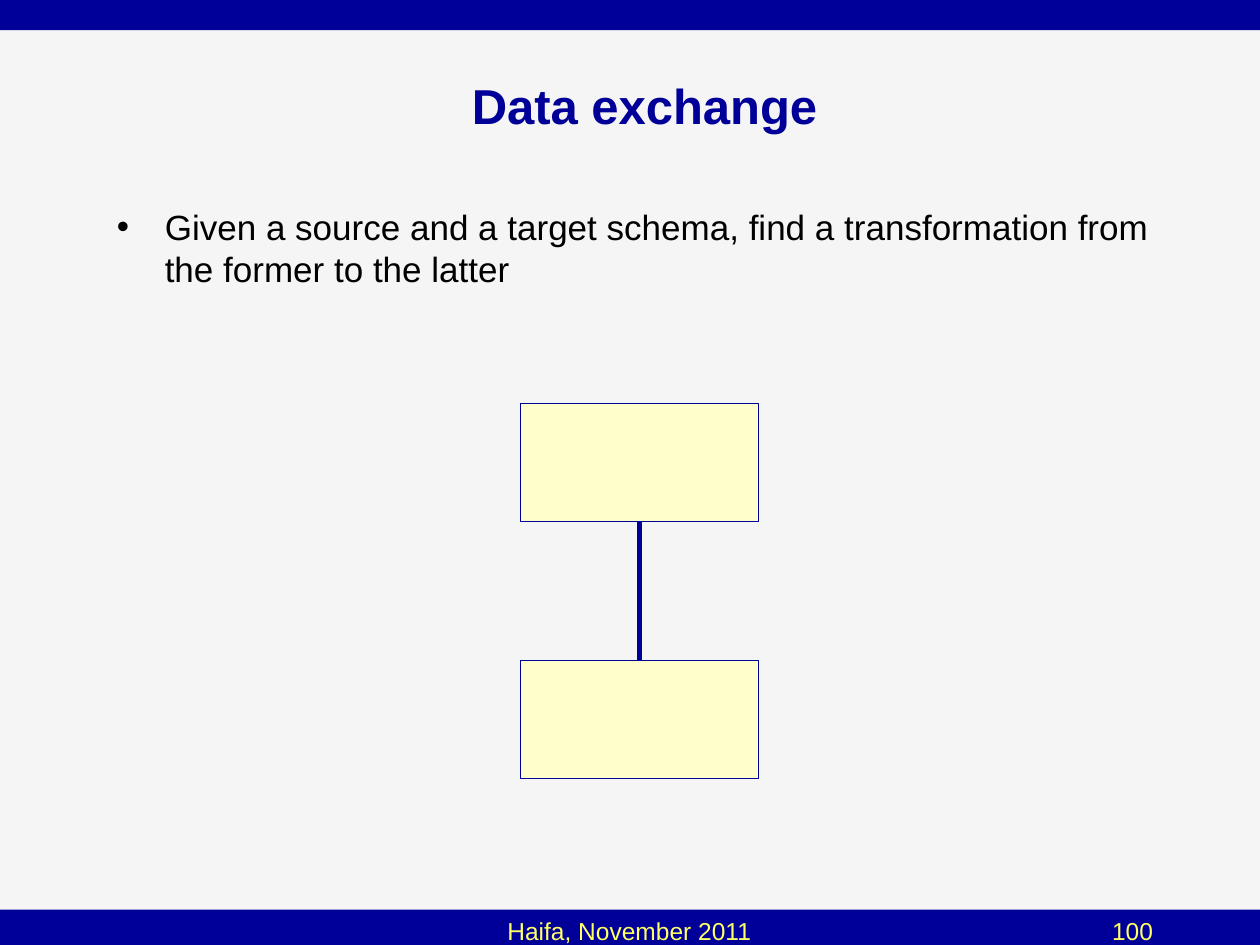
"""Build the data exchange slide with two schemas joined by a line."""
from lxml.etree import SubElement
from pptx import Presentation
from pptx.dml.color import RGBColor
from pptx.enum.shapes import MSO_CONNECTOR, MSO_SHAPE
from pptx.enum.text import MSO_ANCHOR, PP_ALIGN
from pptx.oxml.ns import qn
from pptx.util import Inches, Pt

COLORS = {
    "background": "F5F5F5",
    "navy": "000099",
    "footer": "FFFF66",
    "schema": "FFFFCC",
    "text": "000000",
}


def add_text(text, left, top, width, height, size, color, bold=False,
             align=PP_ALIGN.LEFT, anchor=MSO_ANCHOR.TOP, bullet=None):
    box = slide.shapes.add_textbox(Inches(left), Inches(top), Inches(width), Inches(height))
    frame = box.text_frame
    frame.word_wrap = True
    frame.vertical_anchor = anchor
    paragraph = frame.paragraphs[0]
    paragraph.alignment = align
    if bullet:
        properties = paragraph._p.get_or_add_pPr()
        properties.set("marL", str(Inches(0.38)))
        properties.set("indent", str(Inches(-0.38)))
        SubElement(properties, qn("a:buFont"), typeface="Arial")
        SubElement(properties, qn("a:buChar"), char=bullet)
    run = paragraph.add_run()
    run.text = text
    run.font.name = "Arial"
    run.font.size = Pt(size)
    run.font.bold = bold
    run.font.color.rgb = RGBColor.from_string(COLORS[color])


presentation = Presentation()
presentation.slide_width = Inches(10)
presentation.slide_height = Inches(7.5)
slide = presentation.slides.add_slide(presentation.slide_layouts[6])
slide.background.fill.solid()
slide.background.fill.fore_color.rgb = RGBColor.from_string(COLORS["background"])

schema_left, schema_width, schema_height = 4.13, 1.89, 0.94
source_top, target_top = 3.2, 5.24
rectangles = [
    (0, 0, 10, 0.24, "navy"),
    (0, 7.22, 10, 0.28, "navy"),
    (schema_left, source_top, schema_width, schema_height, "schema"),
    (schema_left, target_top, schema_width, schema_height, "schema"),
]
for left, top, width, height, fill in rectangles:
    shape = slide.shapes.add_shape(
        MSO_SHAPE.RECTANGLE, Inches(left), Inches(top), Inches(width), Inches(height))
    shape.shadow.inherit = False
    shape.fill.solid()
    shape.fill.fore_color.rgb = RGBColor.from_string(COLORS[fill])
    if fill == "schema":
        shape.line.color.rgb = RGBColor.from_string(COLORS["navy"])
        shape.line.width = Pt(0.75)
    else:
        shape.line.fill.background()

center = Inches(schema_left + schema_width / 2)
connector = slide.shapes.add_connector(
    MSO_CONNECTOR.STRAIGHT, center, Inches(source_top + schema_height),
    center, Inches(target_top))
connector.line.color.rgb = RGBColor.from_string(COLORS["navy"])
connector.line.width = Pt(3)
SubElement(connector._element.spPr, qn("a:effectLst"))

add_text("Data exchange", 0.43, 0.25, 9.37, 1.17, 28, "navy", bold=True,
         align=PP_ALIGN.CENTER, anchor=MSO_ANCHOR.MIDDLE)
add_text("Given a source and a target schema, find a transformation from the former to the latter",
         0.83, 1.58, 8.5, 4.92, 20, "text", bullet="•")
add_text("Haifa, November 2011", 2.16, 7.22, 5.67, 0.5, 14, "footer", align=PP_ALIGN.CENTER)
add_text("100", 7.91, 7.22, 1.34, 0.5, 14, "footer", align=PP_ALIGN.RIGHT)

presentation.save("out.pptx")
